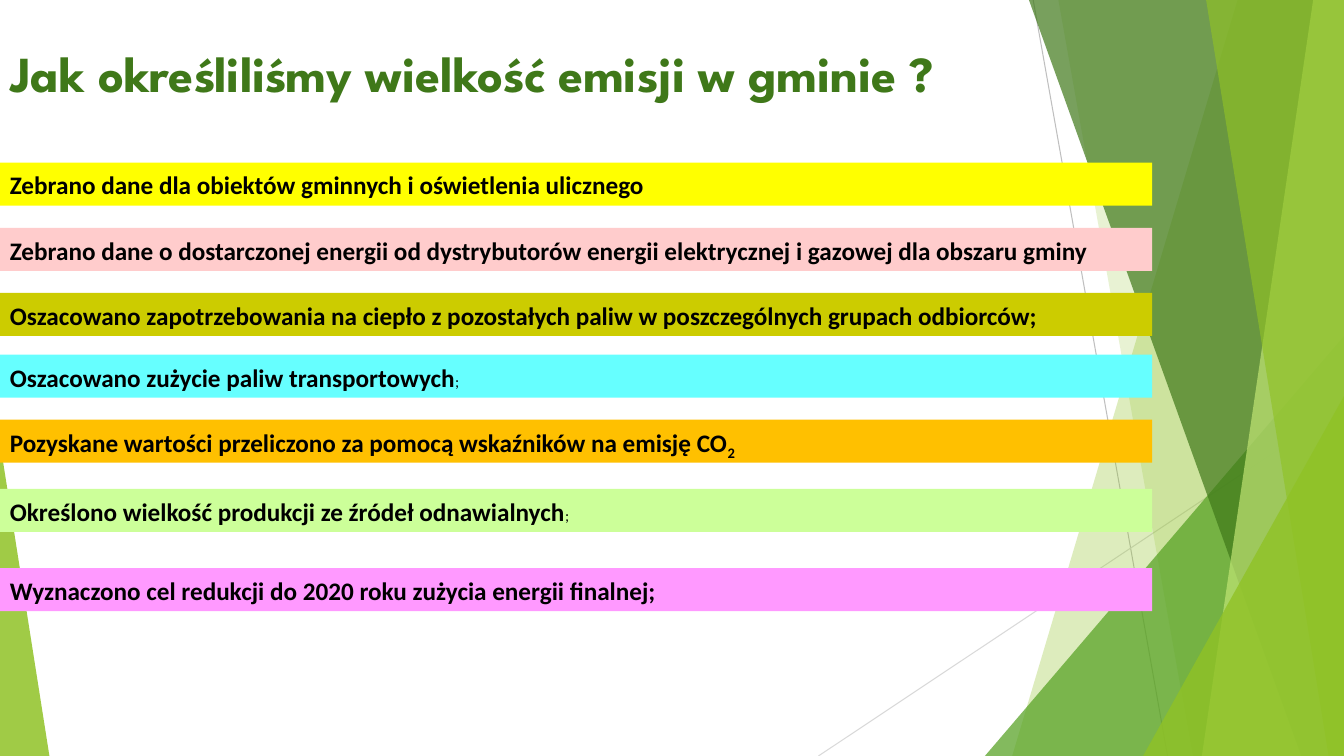
import dataclasses

import lxml.etree
import pptx
import pptx.dml.color
import pptx.enum.shapes
import pptx.enum.text
import pptx.oxml.ns
import pptx.util

Pt = pptx.util.Pt
qn = pptx.oxml.ns.qn
WIDTH, HEIGHT = 960, 540


@dataclasses.dataclass(frozen=True)
class Theme:
    heading_font: str = "League Spartan"
    body_font: str = "Calibri"
    heading_size: int = 36
    step_size: int = 18
    small_size: int = 11
    ink: str = "000000"
    lime: str = "90C226"
    pale_lime: str = "C0E474"
    leaf: str = "54A021"
    forest: str = "3F7819"
    dark_hairline: str = "BFBFBF"
    light_hairline: str = "D9D9D9"
    yellow: str = "FFFF00"
    rose: str = "FFCCCC"
    olive: str = "CCCC00"
    cyan: str = "66FFFF"
    amber: str = "FFC000"
    mint: str = "CCFF99"
    pink: str = "FF99FF"


THEME = Theme()

STEPS = [
    (116.2, THEME.yellow, "Zebrano dane dla obiektów gminnych i oświetlenia ulicznego", "", ""),
    (162.8, THEME.rose, "Zebrano dane o dostarczonej energii od dystrybutorów energii "
     "elektrycznej i gazowej dla obszaru gminy", "", ""),
    (209.2, THEME.olive, "Oszacowano zapotrzebowania na ciepło z pozostałych paliw "
     "w poszczególnych grupach odbiorców;", "", ""),
    (253.4, THEME.cyan, "Oszacowano zużycie paliw transportowych", ";", "small"),
    (299.8, THEME.amber, "Pozyskane wartości przeliczono za pomocą wskaźników na emisję CO", "2", "subscript"),
    (349.2, THEME.mint, "Określono wielkość produkcji ze źródeł odnawialnych", ";", "small"),
    (405.8, THEME.pink, "Wyznaczono cel redukcji do 2020 roku zużycia energii finalnej;", "", ""),
]


def rgb(color):
    return pptx.dml.color.RGBColor.from_string(color)


def paint(shape, color, opacity=100):
    shape.shadow.inherit = False
    shape.line.fill.background()
    shape.fill.solid()
    shape.fill.fore_color.rgb = rgb(color)
    if opacity < 100:
        tint = shape.fill._xPr.find(".//" + qn("a:srgbClr"))
        lxml.etree.SubElement(tint, qn("a:alpha"), val=str(opacity * 1000))


def add_run(paragraph, text, font, size, color, bold=True):
    run = paragraph.add_run()
    run.text = text
    run.font.name = font
    run.font.size = Pt(size)
    run.font.bold = bold
    run.font.color.rgb = rgb(color)
    return run


def add_hairline(slide, start, end, color):
    hairline = slide.shapes.add_connector(
        pptx.enum.shapes.MSO_CONNECTOR.STRAIGHT, *map(Pt, start + end))
    hairline.line.color.rgb = rgb(color)
    hairline.line.width = Pt(0.75)
    lxml.etree.SubElement(hairline._element.spPr, qn("a:effectLst"))


def add_shard(slide, right, bottom, top_x, bottom_x, color, opacity):
    outline = slide.shapes.build_freeform(Pt(top_x), 0, scale=1.0)
    corners = [(right, 0), (right, bottom), (bottom_x, bottom)]
    outline.add_line_segments([(Pt(x), Pt(y)) for x, y in corners], close=True)
    paint(outline.convert_to_shape(), color, opacity)


def add_wedge(slide, left, top, right, bottom, apex, color, opacity):
    wedge = slide.shapes.add_shape(
        pptx.enum.shapes.MSO_SHAPE.ISOSCELES_TRIANGLE,
        Pt(left), Pt(top), Pt(right - left), Pt(bottom - top))
    wedge.adjustments[0] = apex
    paint(wedge, color, opacity)


def add_backdrop(slide, left, top, width, height):
    right, bottom = left + width, top + height
    add_hairline(slide, (right - 222, top), (right - 126, bottom), THEME.dark_hairline)
    add_hairline(slide, (right, top + 290), (right - 375.4, bottom), THEME.light_hairline)
    add_shard(slide, right, bottom, right - 76, right - 237, THEME.lime, 30)
    add_shard(slide, right, bottom, right - 204, right - 108, THEME.lime, 20)
    add_wedge(slide, right - 256.5, top + 240, right, bottom, 1, THEME.leaf, 72)
    add_shard(slide, right, bottom, right - 225, right - 30.5, THEME.forest, 70)
    add_shard(slide, right, bottom, right - 22, right - 101.5, THEME.pale_lime, 70)
    add_shard(slide, right, bottom, right - 98.5, right - 11, THEME.lime, 65)
    add_wedge(slide, right - 143.5, top + 283, right, bottom, 1, THEME.lime, 80)
    add_wedge(slide, left, top + 316, left + 35.3, bottom, 0, THEME.lime, 85)


def add_heading(slide, left, top, width, height):
    heading = slide.shapes.title
    heading._element.getparent().append(heading._element)
    heading.left, heading.top, heading.width, heading.height = map(Pt, (left, top, width, height))
    frame = heading.text_frame
    frame.word_wrap = True
    frame.auto_size = pptx.enum.text.MSO_AUTO_SIZE.NONE
    frame.vertical_anchor = pptx.enum.text.MSO_ANCHOR.TOP
    question = frame.paragraphs[0]
    question.alignment = pptx.enum.text.PP_ALIGN.LEFT
    add_run(question, "Jak określiliśmy wielkość emisji w gminie ?",
            THEME.heading_font, THEME.heading_size, THEME.forest)


def add_step(slide, left, top, width, height, color, text, ending, style):
    bar = slide.shapes.add_shape(
        pptx.enum.shapes.MSO_SHAPE.RECTANGLE, Pt(left), Pt(top), Pt(width), Pt(height))
    paint(bar, color)
    frame = bar.text_frame
    frame.word_wrap = True
    frame.auto_size = pptx.enum.text.MSO_AUTO_SIZE.SHAPE_TO_FIT_TEXT
    frame.vertical_anchor = pptx.enum.text.MSO_ANCHOR.TOP
    step = frame.paragraphs[0]
    step.alignment = pptx.enum.text.PP_ALIGN.LEFT
    step.line_spacing = 1.07
    step.space_after = Pt(8)
    add_run(step, text, THEME.body_font, THEME.step_size, THEME.ink)
    if style == "small":
        add_run(step, ending, THEME.body_font, THEME.small_size, THEME.ink, bold=False)
    elif style == "subscript":
        index = add_run(step, ending, THEME.body_font, THEME.step_size, THEME.ink)
        index.font._element.set("baseline", "-25000")


def add_steps(slide, left, top, width):
    for offset, color, text, ending, style in STEPS:
        add_step(slide, left, top + offset, width, 30.7, color, text, ending, style)


def main():
    deck = pptx.Presentation()
    deck.slide_width, deck.slide_height = Pt(WIDTH), Pt(HEIGHT)
    slide = deck.slides.add_slide(deck.slide_layouts.get_by_name("Title Only"))
    add_backdrop(slide, 0, 0, WIDTH, HEIGHT)
    add_heading(slide, 0, 26.6, 767.5, 48)
    add_steps(slide, 0, 0, 823)
    deck.save("out.pptx")


if __name__ == "__main__":
    main()
